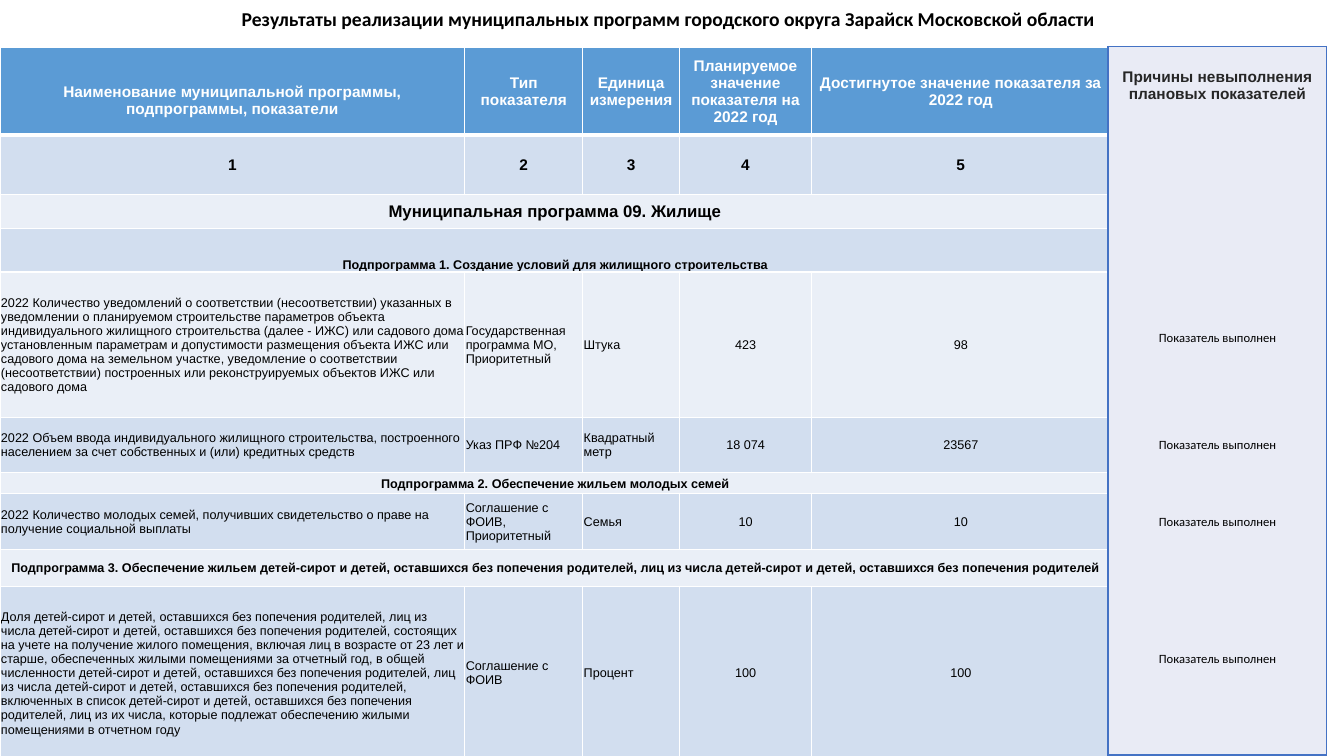
from pptx import Presentation
from pptx.dml.color import RGBColor
from pptx.enum.text import MSO_ANCHOR, MSO_AUTO_SIZE, PP_ALIGN
from pptx.oxml import parse_xml
from pptx.oxml.ns import nsdecls
from pptx.util import Inches, Pt

WHITE = RGBColor(0xFF, 0xFF, 0xFF)
BLACK = RGBColor(0, 0, 0)
DARK_GREY = RGBColor(0x26, 0x26, 0x26)
HEADER_BLUE = RGBColor(0x5B, 0x9B, 0xD5)
BAND_DARK = RGBColor(0xD2, 0xDE, 0xEF)
BAND_LIGHT = RGBColor(0xEA, 0xEF, 0xF7)
REASONS_FILL = RGBColor(0xE9, 0xEB, 0xF5)
REASONS_LINE = RGBColor(0x44, 0x72, 0xC4)

COLUMN_WIDTHS = [4.61, 1.17, 0.96, 1.31, 2.96]
ROW_HEIGHTS = [0.87, 0.59, 0.34, 0.43, 1.44, 0.55, 0.21, 0.55, 0.37, 1.71]

# One-item rows span the whole table
INDICATOR_ROWS = [
    ["Наименование муниципальной программы, подпрограммы, показатели",
     "Тип показателя", "Единица измерения",
     "Планируемое значение показателя на 2022 год",
     "Достигнутое значение показателя за 2022 год"],
    ["1", "2", "3", "4", "5"],
    ["Муниципальная программа 09. Жилище"],
    ["Подпрограмма 1. Создание условий для жилищного строительства"],
    ["2022 Количество уведомлений о соответствии (несоответствии) указанных в "
     "уведомлении о планируемом строительстве параметров объекта индивидуального "
     "жилищного строительства (далее - ИЖС) или садового дома установленным "
     "параметрам и допустимости размещения объекта ИЖС или садового дома на "
     "земельном участке, уведомление о соответствии (несоответствии) построенных "
     "или реконструируемых объектов ИЖС или садового дома",
     "Государственная программа МО, Приоритетный", "Штука", "423", "98"],
    ["2022 Объем ввода индивидуального жилищного строительства, построенного "
     "населением за счет собственных и (или) кредитных средств",
     "Указ ПРФ №204", "Квадратный метр", "18 074", "23567"],
    ["Подпрограмма 2. Обеспечение жильем молодых семей"],
    ["2022 Количество молодых семей, получивших свидетельство о праве на "
     "получение социальной выплаты",
     "Соглашение с ФОИВ, Приоритетный", "Семья", "10", "10"],
    ["Подпрограмма 3. Обеспечение жильем детей-сирот и детей, оставшихся без "
     "попечения родителей, лиц из числа детей-сирот и детей, оставшихся без "
     "попечения родителей"],
    ["Доля детей-сирот и детей, оставшихся без попечения родителей, лиц из числа "
     "детей-сирот и детей, оставшихся без попечения родителей, состоящих на учете "
     "на получение жилого помещения, включая лиц в возрасте от 23 лет и старше, "
     "обеспеченных жилыми помещениями за отчетный год, в общей численности "
     "детей-сирот и детей, оставшихся без попечения родителей, лиц из числа "
     "детей-сирот и детей, оставшихся без попечения родителей, включенных в список "
     "детей-сирот и детей, оставшихся без попечения родителей, лиц из их числа, "
     "которые подлежат обеспечению жилыми помещениями в отчетном году",
     "Соглашение с ФОИВ", "Процент", "100", "100"],
]
ROW_SIZES = {0: 11, 1: 11, 2: 12}  # all other rows are 9 pt

# Space in points above each "done" note, aligning it with its indicator
NOTE_GAPS = [163, 65.5, 44, 87]


def style_paragraph(paragraph, size, color, bold=False, font="Arial",
                    align=PP_ALIGN.CENTER):
    paragraph.alignment = align
    paragraph.font.name = font
    paragraph.font.size = Pt(size)
    paragraph.font.bold = bold
    paragraph.font.color.rgb = color


def paint_cell(cell, fill, line, top=1, bottom=1):
    properties = cell._tc.get_or_add_tcPr()
    for side, width in (("L", 1), ("R", 1), ("T", top), ("B", bottom)):
        properties.append(parse_xml(
            f'<a:ln{side} {nsdecls("a")} w="{Pt(width)}"><a:solidFill>'
            f'<a:srgbClr val="{line}"/></a:solidFill></a:ln{side}>'))
    cell.fill.solid()
    cell.fill.fore_color.rgb = fill


def add_plain_table(slide, left, top, widths, heights):
    table = slide.shapes.add_table(
        len(heights), len(widths), Inches(left), Inches(top),
        Inches(sum(widths)), Inches(sum(heights))).table
    table.first_row = table.horz_banding = False
    for column, width in zip(table.columns, widths):
        column.width = Inches(width)
    for row, height in zip(table.rows, heights):
        row.height = Inches(height)
    return table


def add_title(slide, left, top, width, height):
    title = slide.shapes.add_textbox(
        Inches(left), Inches(top), Inches(width), Inches(height)).text_frame
    title.word_wrap = True
    title.auto_size = MSO_AUTO_SIZE.SHAPE_TO_FIT_TEXT
    title.text = ("Результаты реализации муниципальных программ "
                  "городского округа Зарайск Московской области")
    style_paragraph(title.paragraphs[0], 14, BLACK, True, "Calibri")


def add_indicators(slide, left, top):
    table = add_plain_table(slide, left, top, COLUMN_WIDTHS, ROW_HEIGHTS)
    for r, texts in enumerate(INDICATOR_ROWS):
        is_header = r == 0
        is_section = len(texts) == 1
        bold = is_section or r < 2
        fill = HEADER_BLUE if is_header else BAND_DARK if r % 2 else BAND_LIGHT
        if is_section:
            table.cell(r, 0).merge(table.cell(r, len(COLUMN_WIDTHS) - 1))
        for c in range(len(COLUMN_WIDTHS)):
            cell = table.cell(r, c)
            paint_cell(cell, fill, WHITE, top=3 if r == 1 else 1,
                       bottom=3 if is_header else 1)
            cell.margin_left = cell.margin_right = cell.margin_top = Inches(0.01)
            cell.margin_bottom = 0
            cell.vertical_anchor = MSO_ANCHOR.MIDDLE
            if c < len(texts):
                cell.text = texts[c]
            align = PP_ALIGN.CENTER if bold or c > 2 else PP_ALIGN.LEFT
            style_paragraph(cell.text_frame.paragraphs[0], ROW_SIZES.get(r, 9),
                            WHITE if is_header else BLACK, bold, align=align)
    # The first heading and the first subprogramme sit low in their rows
    table.cell(0, 0).margin_top = Inches(0.19)
    table.cell(3, 0).vertical_anchor = MSO_ANCHOR.BOTTOM


def add_reasons(slide, left, top, width, height):
    cell = add_plain_table(slide, left, top, [width], [height]).cell(0, 0)
    paint_cell(cell, REASONS_FILL, REASONS_LINE)
    cell.margin_top = Inches(0.22)
    cell.text = "Причины невыполнения плановых показателей"
    style_paragraph(cell.text_frame.paragraphs[0], 11, DARK_GREY, True)
    for gap in NOTE_GAPS:
        note = cell.text_frame.add_paragraph()
        note.text = "Показатель выполнен"
        note.space_before = Pt(gap)
        style_paragraph(note, 9, BLACK, font="Calibri")


def main():
    presentation = Presentation()
    presentation.slide_width = Inches(13.33)
    presentation.slide_height = Inches(7.5)
    slide = presentation.slides.add_slide(presentation.slide_layouts[6])
    add_title(slide, -0.08, 0.02, 13.42, 0.34)
    add_indicators(slide, 0, 0.47)
    add_reasons(slide, 10.99, 0.46, 2.17, 7.03)
    presentation.save("out.pptx")


if __name__ == "__main__":
    main()
